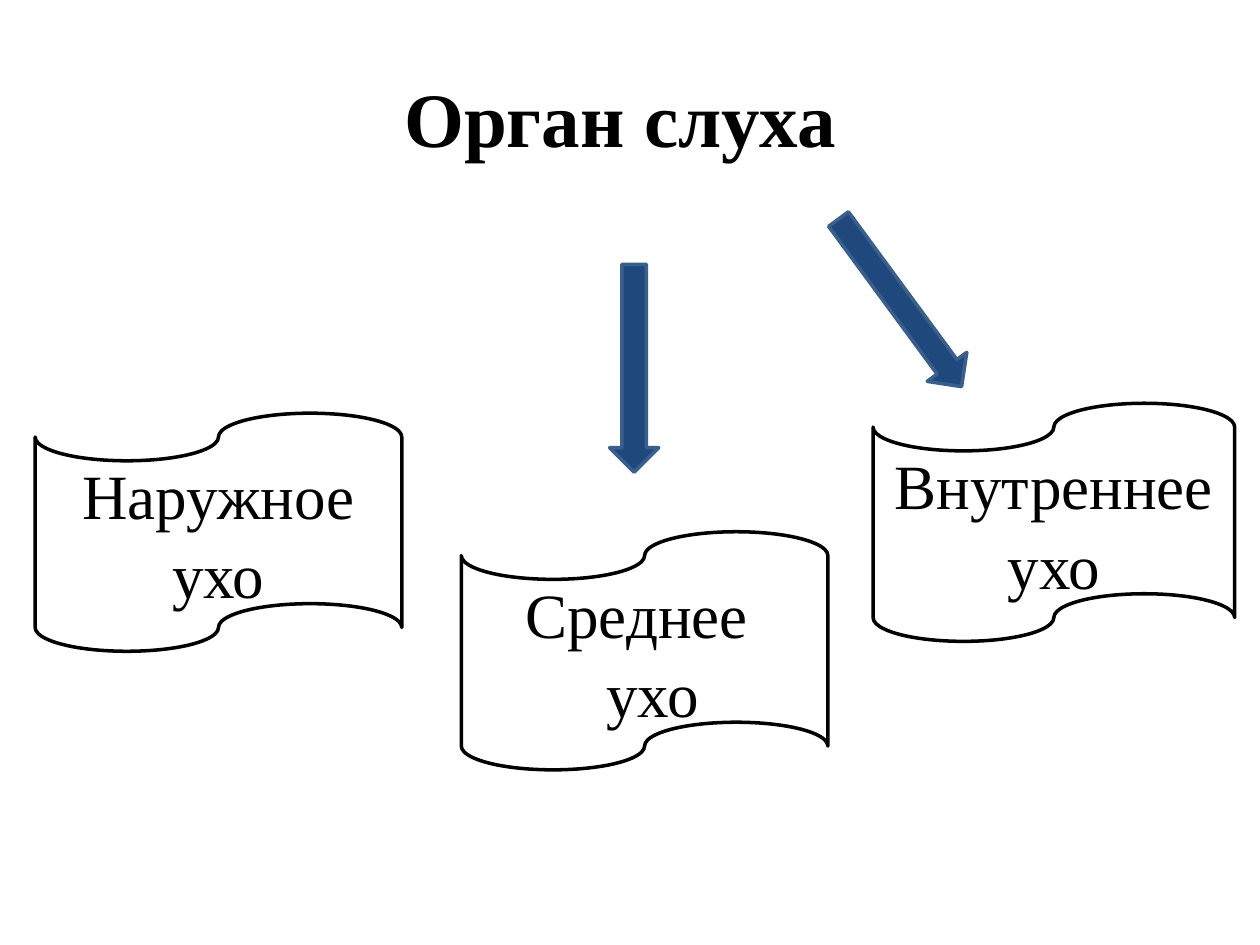
"""Build a slide showing the three parts of the organ of hearing."""
from pptx import Presentation
from pptx.dml.color import RGBColor
from pptx.enum.shapes import MSO_SHAPE
from pptx.enum.text import MSO_ANCHOR, PP_ALIGN
from pptx.util import Cm, Pt

BLACK = RGBColor(0x00, 0x00, 0x00)
NAVY = RGBColor(0x1F, 0x49, 0x7D)
STEEL = RGBColor(0x3A, 0x5F, 0x8C)
FONT = "Times New Roman"

TITLE = "Орган слуха "
ARROWS = [(12.29, 5.33, 0), (17.65, 4.01, 323.7)]
ARROW_SIZE = (0.99, 4.19)
EAR_PARTS = [
    ("Наружное ухо", 0.71, 8.33, 7.39),
    ("Среднее \n ухо", 9.3, 10.72, 7.39),
    ("Внутреннее ухо", 17.6, 8.13, 7.29),
]
TAPE_HEIGHT = 4.8


def write_text(shape, text, size, bold=False, line_spacing=None):
    frame = shape.text_frame
    frame.text = text
    frame.word_wrap = True
    frame.vertical_anchor = MSO_ANCHOR.MIDDLE
    for paragraph in frame.paragraphs:
        paragraph.alignment = PP_ALIGN.CENTER
        paragraph.line_spacing = line_spacing
        for run in paragraph.runs:
            run.font.name = FONT
            run.font.size = Pt(size)
            run.font.bold = bold
            run.font.color.rgb = BLACK


def add_outlined_shape(slide, kind, box, line_color):
    shape = slide.shapes.add_shape(kind, *(Cm(length) for length in box))
    shape.shadow.inherit = False
    shape.line.color.rgb = line_color
    shape.line.width = Pt(2)
    return shape


def main():
    presentation = Presentation()
    presentation.slide_width, presentation.slide_height = Cm(25.4), Cm(19.05)
    slide = presentation.slides.add_slide(presentation.slide_layouts[5])

    title = slide.shapes.title
    title.left, title.top = Cm(1.27), Cm(0.76)
    title.width, title.height = Cm(22.86), Cm(3.18)
    write_text(title, TITLE, 44, bold=True)

    for left, top, rotation in ARROWS:
        arrow = add_outlined_shape(
            slide, MSO_SHAPE.DOWN_ARROW, (left, top, *ARROW_SIZE), STEEL)
        arrow.fill.solid()
        arrow.fill.fore_color.rgb = NAVY
        arrow.rotation = rotation

    for text, left, top, width in EAR_PARTS:
        tape = add_outlined_shape(
            slide, MSO_SHAPE.FLOWCHART_PUNCHED_TAPE,
            (left, top, width, TAPE_HEIGHT), BLACK)
        tape.fill.background()
        write_text(tape, text, 36, line_spacing=1.05)

    presentation.save("out.pptx")


if __name__ == "__main__":
    main()
